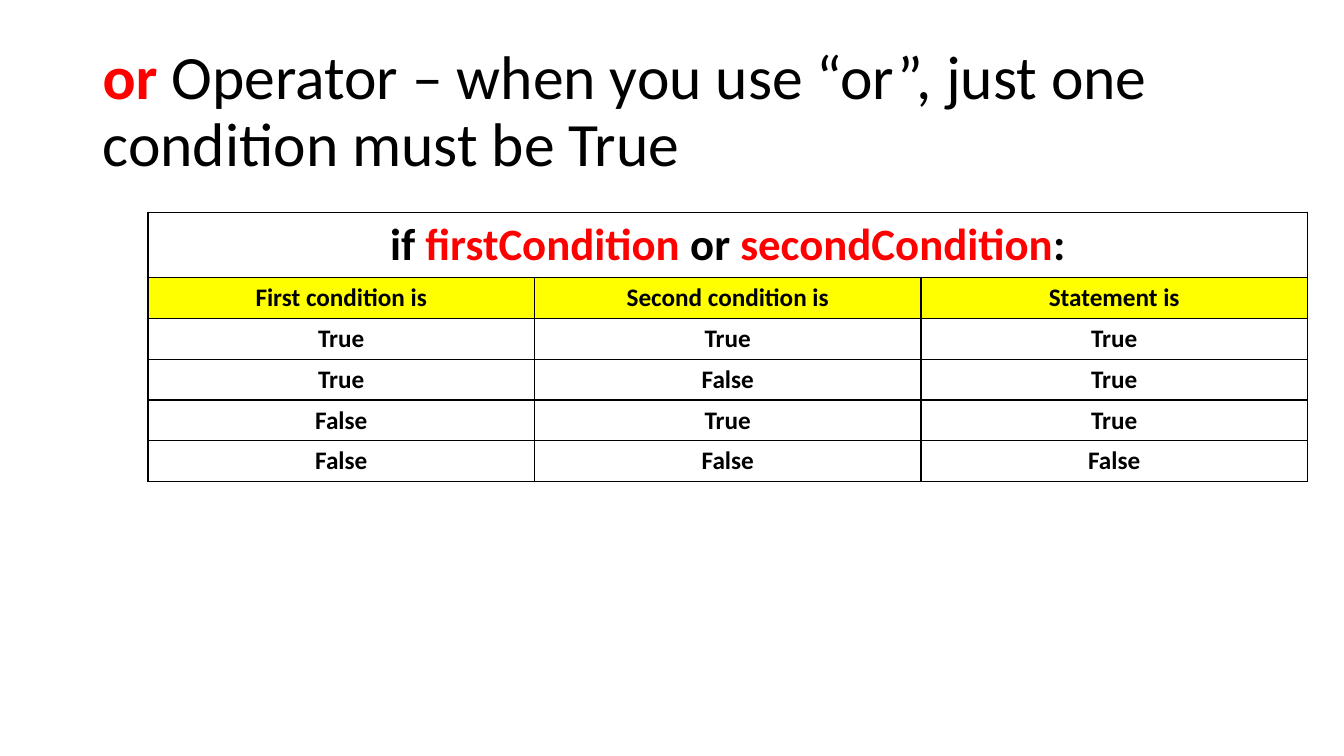
from lxml.etree import SubElement
from pptx import Presentation
from pptx.dml.color import RGBColor as RGB
from pptx.enum.text import MSO_ANCHOR as ANCHOR, MSO_AUTO_SIZE as AUTO, PP_ALIGN as ALIGN
from pptx.oxml.ns import qn
from pptx.util import Cm, Pt

COLORS = {"text": "000000", "accent": "FF0000", "header": "FFFF00", "border": "000000"}

TITLE = [("or", "accent", True),
         (" Operator – when you use “or”, just one condition must be True", "text", False)]
STATEMENT = [("if ", "text", True), ("firstCondition", "accent", True),
             (" or ", "text", True), ("secondCondition", "accent", True),
             (":", "text", True)]
HEADERS = ["First condition is", "Second condition is", "Statement is"]
OUTCOMES = [(True, True), (True, False), (False, True), (False, False)]

TITLE_BOX = (Cm(2.33), Cm(1.01), Cm(29.21), Cm(3.68))
TABLE_LEFT, TABLE_TOP = Cm(3.73), Cm(5.35)
COL_W, TOP_ROW_H, ROW_H = Cm(9.74), Cm(1.64), Cm(1.03)


def write(p, runs, size, align):
    p.alignment = align
    for text, color, bold in runs:
        r = p.add_run()
        r.text = text
        for name, value in {"name": "Calibri", "size": Pt(size), "bold": bold}.items():
            setattr(r.font, name, value)
        r.font.color.rgb = RGB.from_string(COLORS[color])


def add_borders(cell):
    tcPr = cell._tc.get_or_add_tcPr()
    for side in ("lnL", "lnR", "lnT", "lnB"):
        ln = SubElement(tcPr, qn("a:" + side), w=str(Pt(1)))
        fill = SubElement(ln, qn("a:solidFill"))
        SubElement(fill, qn("a:srgbClr"), val=COLORS["border"])


def add_title(s):
    sp = s.shapes.title
    sp.left, sp.top, sp.width, sp.height = TITLE_BOX
    tf = sp.text_frame
    for name, value in {"word_wrap": True, "auto_size": AUTO.NONE,
                        "vertical_anchor": ANCHOR.MIDDLE}.items():
        setattr(tf, name, value)
    p = tf.paragraphs[0]
    p.line_spacing = 0.9
    write(p, TITLE, 44, ALIGN.LEFT)


def add_truth_table(s):
    rows = [HEADERS] + [(str(a), str(b), str(a or b)) for a, b in OUTCOMES]
    n_rows, n_cols = len(rows) + 1, len(HEADERS)
    table = s.shapes.add_table(n_rows, n_cols, TABLE_LEFT, TABLE_TOP, COL_W * n_cols,
                               TOP_ROW_H + ROW_H * len(rows)).table
    table.first_row = table.horz_banding = False
    for col in table.columns:
        col.width = COL_W
    for i, row in enumerate(table.rows):
        row.height = ROW_H if i else TOP_ROW_H
        for cell in row.cells:
            add_borders(cell)
            if i == 1:
                cell.fill.solid()
                cell.fill.fore_color.rgb = RGB.from_string(COLORS["header"])
            else:
                cell.fill.background()

    table.cell(0, 0).merge(table.cell(0, n_cols - 1))
    write(table.cell(0, 0).text_frame.paragraphs[0], STATEMENT, 32, ALIGN.CENTER)
    for i, texts in enumerate(rows, 1):
        for j, text in enumerate(texts):
            p = table.cell(i, j).text_frame.paragraphs[0]
            write(p, [(text, "text", True)], 18, ALIGN.CENTER)


def main():
    prs = Presentation()
    prs.slide_width, prs.slide_height = Cm(33.87), Cm(19.05)
    s = prs.slides.add_slide(prs.slide_layouts[5])
    add_title(s)
    add_truth_table(s)
    prs.save("out.pptx")


if __name__ == "__main__":
    main()
